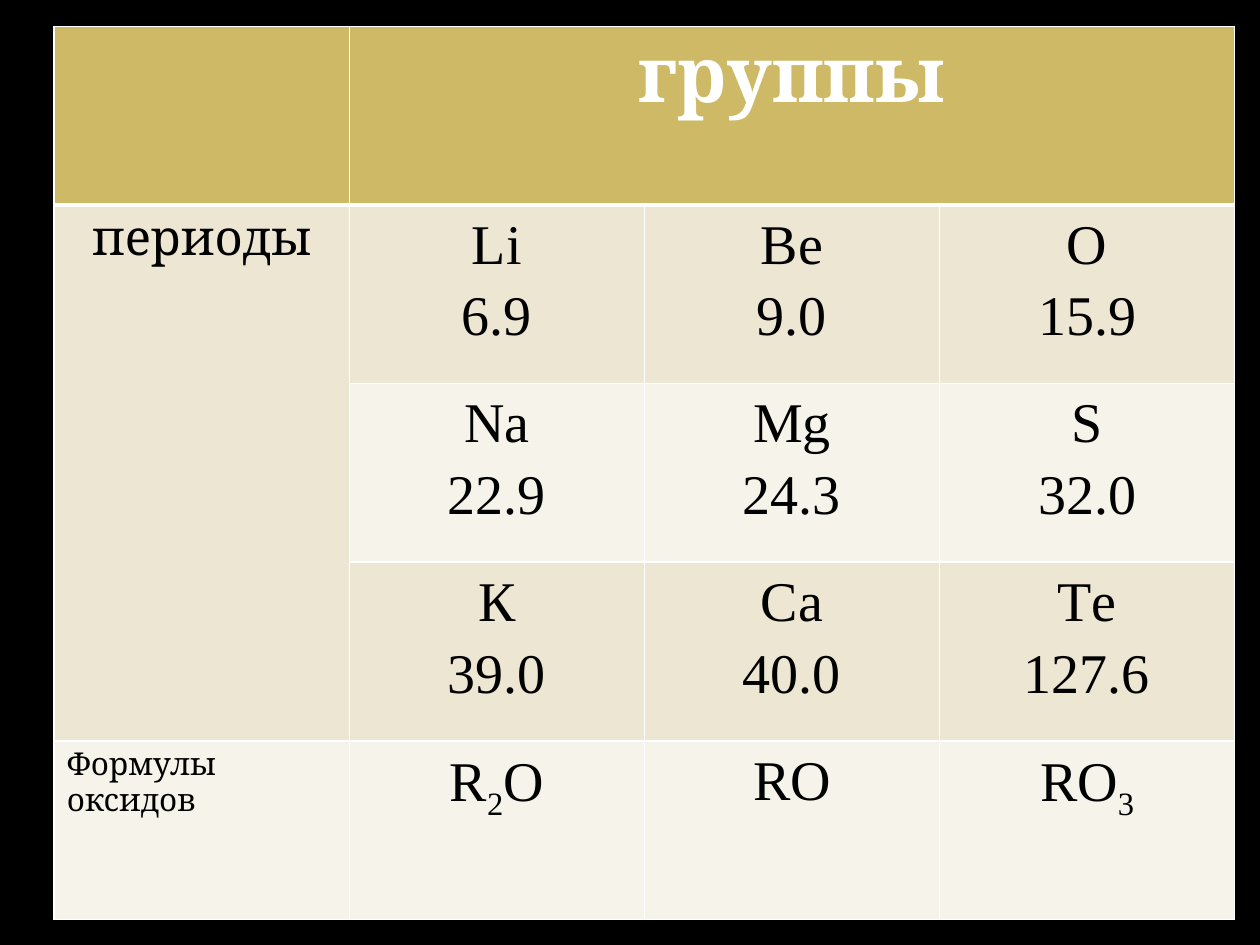
import dataclasses

import lxml.etree
import pptx
import pptx.dml.color
import pptx.enum.text
import pptx.oxml.ns
import pptx.util


@dataclasses.dataclass(frozen=True)
class Theme:
    backdrop: str = "000000"
    header: str = "CEB966"
    bands: tuple = ("EDE6D3", "F6F3EA")
    line: str = "FFFFFF"
    light: str = "FFFFFF"
    dark: str = "000000"
    label_font: str = "Cambria"
    value_font: str = "Times New Roman"
    header_size: int = 44
    value_size: int = 32
    side_size: int = 28
    note_size: int = 18
    thin: int = 1
    thick: int = 3


THEME = Theme()
CENTER = pptx.enum.text.PP_ALIGN.CENTER
ROWS, COLS = 5, 4
SUBSCRIPT = "-25000"

ELEMENTS = [
    [("Li", "6.9"), ("Be", "9.0"), ("O", "15.9")],
    [("Na", "22.9"), ("Mg", "24.3"), ("S", "32.0")],
    [("К", "39.0"), ("Ca", "40.0"), ("Тe", "127.6")],
]
OXIDES = ["R2O", "RO", "RO3"]


def rgb(value):
    return pptx.dml.color.RGBColor.from_string(value)


def set_borders(cell, bottom, top):
    tc_pr = cell._tc.get_or_add_tcPr()
    for side, width in (("L", THEME.thin), ("R", THEME.thin), ("T", top), ("B", bottom)):
        ln = lxml.etree.SubElement(tc_pr, pptx.oxml.ns.qn(f"a:ln{side}"),
                                   w=str(pptx.util.Pt(width)))
        fill = lxml.etree.SubElement(ln, pptx.oxml.ns.qn("a:solidFill"))
        lxml.etree.SubElement(fill, pptx.oxml.ns.qn("a:srgbClr"), val=THEME.line)


def add_run(p, text, size, font, color=THEME.dark, bold=False):
    r = p.add_run()
    r.text = text
    r.font.size = pptx.util.Pt(size)
    r.font.name = font
    r.font.bold = bold
    r.font.color.rgb = rgb(color)
    return r


def fill_label(cell, text, size, align=None, color=THEME.dark, bold=False):
    p = cell.text_frame.paragraphs[0]
    p.alignment = align
    add_run(p, text, size, THEME.label_font, color, bold)


def fill_values(cell, lines):
    """Write centred lines; digits after a letter R or O formula become subscripts."""
    cell.margin_left = cell.margin_right = pptx.util.Inches(0.07)
    cell.margin_top = cell.margin_bottom = 0
    tf = cell.text_frame
    for i, line in enumerate(lines):
        p = tf.add_paragraph() if i else tf.paragraphs[0]
        p.alignment = CENTER
        p.line_spacing = 1.15
        parts = line if line.startswith("R") else [line]
        for part in parts:
            r = add_run(p, part, THEME.value_size, THEME.value_font)
            if line.startswith("R") and part.isdigit():
                r.font._element.set("baseline", SUBSCRIPT)


def style_grid(table):
    for row in range(ROWS):
        color = THEME.bands[(row - 1) % 2] if row else THEME.header
        for col in range(COLS):
            cell = table.cell(row, col)
            set_borders(cell,
                        bottom=THEME.thin if row else THEME.thick,
                        top=THEME.thick if row == 1 else THEME.thin)
            cell.fill.solid()
            cell.fill.fore_color.rgb = rgb(color)


def add_periodic_table(s, left, top, width, height):
    table = s.shapes.add_table(ROWS, COLS, left, top, width, height).table
    for column in table.columns:
        column.width = int(width / COLS)
    for row in table.rows:
        row.height = int(height / ROWS)
    style_grid(table)

    groups, periods = table.cell(0, 1), table.cell(1, 0)
    groups.merge(table.cell(0, COLS - 1))
    periods.merge(table.cell(ROWS - 2, 0))
    fill_label(groups, "группы", THEME.header_size, CENTER, THEME.light, True)
    fill_label(periods, "периоды", THEME.side_size, CENTER)
    periods._tc.get_or_add_tcPr().set("vert", "wordArtVert")
    fill_label(table.cell(ROWS - 1, 0), "Формулы оксидов", THEME.note_size)

    value_rows = ELEMENTS + [[(oxide,) for oxide in OXIDES]]
    for row, entries in enumerate(value_rows, start=1):
        for col, lines in enumerate(entries, start=1):
            fill_values(table.cell(row, col), lines)


def main():
    prs = pptx.Presentation()
    prs.slide_width = pptx.util.Inches(10)
    prs.slide_height = pptx.util.Inches(7.5)
    s = prs.slides.add_slide(prs.slide_layouts[6])
    s.background.fill.solid()
    s.background.fill.fore_color.rgb = rgb(THEME.backdrop)
    w, h = prs.slide_width, prs.slide_height
    add_periodic_table(s, int(0.043 * w), int(0.028 * h), int(0.937 * w), int(0.945 * h))
    prs.save("out.pptx")


if __name__ == "__main__":
    main()
